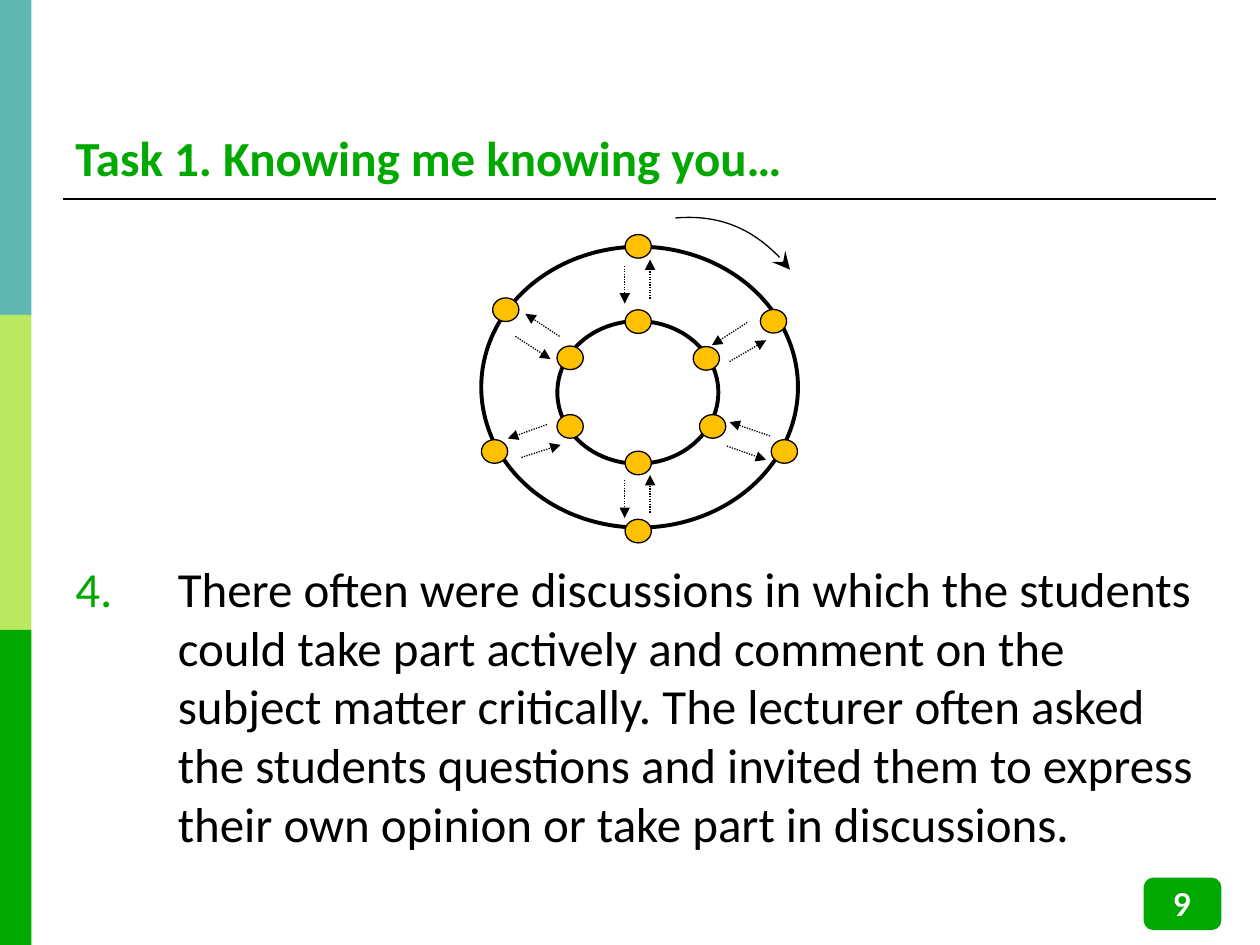
"""Build the slide on two rings of partners who swap opinions."""
from lxml import etree
from pptx import Presentation
from pptx import util as u
from pptx.dml.color import RGBColor
from pptx.enum import dml, shapes, text
from pptx.oxml.ns import qn

COLORS = {"teal": "5FB8B2", "lime": "BAE860", "green": "00A800",
          "amber": "FFC000", "black": "000000", "white": "FFFFFF"}
DOT_W, DOT_H = 15, 13.5
BODY = ("There often were discussions in which the students could take part "
        "actively and comment on the subject matter critically. The lecturer "
        "often asked the students questions and invited them to express their "
        "own opinion or take part in discussions.")
RINGS = [(275, 141, 181, 160.5), (318.5, 183.5, 92, 81.5)]
PAIRS = [((364.7, 140.8), (364.7, 183.8)), ((289, 177), (325.8, 204.5)),
         ((282.6, 258), (325.8, 243.7)), ((364.7, 303.5), (364.7, 264.6)),
         ((442, 183.6), (403.6, 204.8)), ((448.2, 258), (407.2, 243.7))]
TALK_ARROWS = [
    (357, 152, 357, 173.5), (371.5, 170.6, 371.5, 148.3),
    (357, 274.3, 357, 296), (371.5, 293, 371.5, 271.4),
    (319.7, 192.2, 300.2, 179.3), (294.5, 192.2, 314.6, 205.2),
    (312.5, 242.6, 290.2, 250.6), (298, 261.4, 320.4, 254.2),
    (427, 184.3, 406.8, 197.3), (416.9, 206.6, 437.8, 194.4),
    (440, 249.1, 416.9, 241.2), (415.4, 254.9, 437.8, 262.8)]
TURN_CURVE = [(385.9, 124.6), (411.1, 122.4), (435.6, 133.2), (451.4, 154.1)]


def pts(values):
    return [u.Pt(v) for v in values]


def rgb(name):
    return RGBColor.from_string(COLORS[name])


def set_line(sp, width, color="black"):
    sp.line.width = u.Pt(width)
    sp.line.color.rgb = rgb(color)


def add_arrowhead(sp, kind, size):
    ln = sp._element.spPr.find(qn("a:ln"))
    etree.SubElement(ln, qn("a:tailEnd"), type=kind, w=size, len=size)


def add_shape(parent, kind, box, fill, line=None, width=0.75):
    sp = parent.add_shape(kind, *pts(box))
    sp.shadow.inherit = False
    sp.fill.solid()
    sp.fill.fore_color.rgb = rgb(fill)
    if line:
        set_line(sp, width, line)
    else:
        sp.line.fill.background()
    return sp


def add_line(parent, ends, width, dash=None, head=None):
    sp = parent.add_connector(shapes.MSO_CONNECTOR.STRAIGHT, *pts(ends))
    set_line(sp, width)
    if dash:
        sp.line.dash_style = dash
    if head:
        add_arrowhead(sp, head, "med")
    etree.SubElement(sp._element.spPr, qn("a:effectLst"))


def add_curve(parent, points):
    start, *rest = [pts(point) for point in points]
    builder = parent.build_freeform(*start, scale=1.0)
    builder.add_line_segments(rest, close=False)
    sp = builder.convert_to_shape()
    sp.shadow.inherit = False
    sp.fill.background()
    set_line(sp, 0.75)
    add_arrowhead(sp, "stealth", "lg")
    outline = sp._element.spPr.find(".//" + qn("a:path"))
    bezier = etree.SubElement(outline, qn("a:cubicBezTo"))
    for segment in outline.findall(qn("a:lnTo")):
        bezier.append(segment[0])
        outline.remove(segment)


def set_text(sp, content, size=28, color="black", font="Calibri", bold=False,
             align=text.PP_ALIGN.LEFT, anchor=text.MSO_ANCHOR.TOP,
             number=None, indent=0):
    tf = sp.text_frame
    tf.word_wrap = True
    tf.vertical_anchor = anchor
    p = tf.paragraphs[0]
    p.alignment = align
    if number:
        pPr = p._p.get_or_add_pPr()
        pPr.set("marL", str(u.Pt(indent)))
        pPr.set("indent", str(-u.Pt(indent)))
        tint = etree.SubElement(pPr, qn("a:buClr"))
        etree.SubElement(tint, qn("a:srgbClr"), val=COLORS["green"])
        etree.SubElement(pPr, qn("a:buAutoNum"), type="arabicPeriod",
                         startAt=str(number))
    r = p.add_run()
    r.text = content
    r.font.size = u.Pt(size)
    r.font.name = font
    r.font.bold = bold
    r.font.color.rgb = rgb(color)


def add_text(s, box, content, **fmt):
    set_text(s.shapes.add_textbox(*pts(box)), content, **fmt)


def add_frame(s):
    kind = shapes.MSO_SHAPE.RECTANGLE
    for i, color in enumerate(("teal", "lime", "green")):
        add_shape(s.shapes, kind, (0, 180 * i, 18, 180), color)
    add_line(s.shapes, (36, 113.8, 694.8, 113.8), 1.5)


def add_circles(s):
    group = s.shapes.add_group_shape().shapes
    for ring in RINGS:
        add_shape(group, shapes.MSO_SHAPE.OVAL, ring, "white", "black", 2.25)
    for pair in PAIRS:
        for x, y in pair:
            box = (x - DOT_W / 2, y - DOT_H / 2, DOT_W, DOT_H)
            add_shape(group, shapes.MSO_SHAPE.FLOWCHART_CONNECTOR, box,
                      "amber", "black")
    for ends in TALK_ARROWS:
        add_line(group, ends, 0.75, dml.MSO_LINE.ROUND_DOT, "triangle")
    add_curve(group, TURN_CURVE)


def add_page_number(s, number):
    sp = add_shape(s.shapes, shapes.MSO_SHAPE.ROUNDED_RECTANGLE,
                   (654.5, 502.5, 42.5, 28), "green", "green", 2)
    set_text(sp, number, size=18, color="white", font="Lato", bold=True,
             align=text.PP_ALIGN.CENTER, anchor=text.MSO_ANCHOR.MIDDLE)


def main():
    prs = Presentation()
    prs.slide_width, prs.slide_height = u.Pt(720), u.Pt(540)
    s = prs.slides.add_slide(prs.slide_layouts[6])
    add_frame(s)
    add_text(s, (36, 20, 658.8, 90), "Task 1. Knowing me knowing you…",
             color="green", bold=True, anchor=text.MSO_ANCHOR.BOTTOM)
    add_text(s, (36, 315.5, 658.8, 167), BODY, number=4, indent=58.5)
    add_circles(s)
    add_page_number(s, "9")
    prs.save("out.pptx")


if __name__ == "__main__":
    main()
